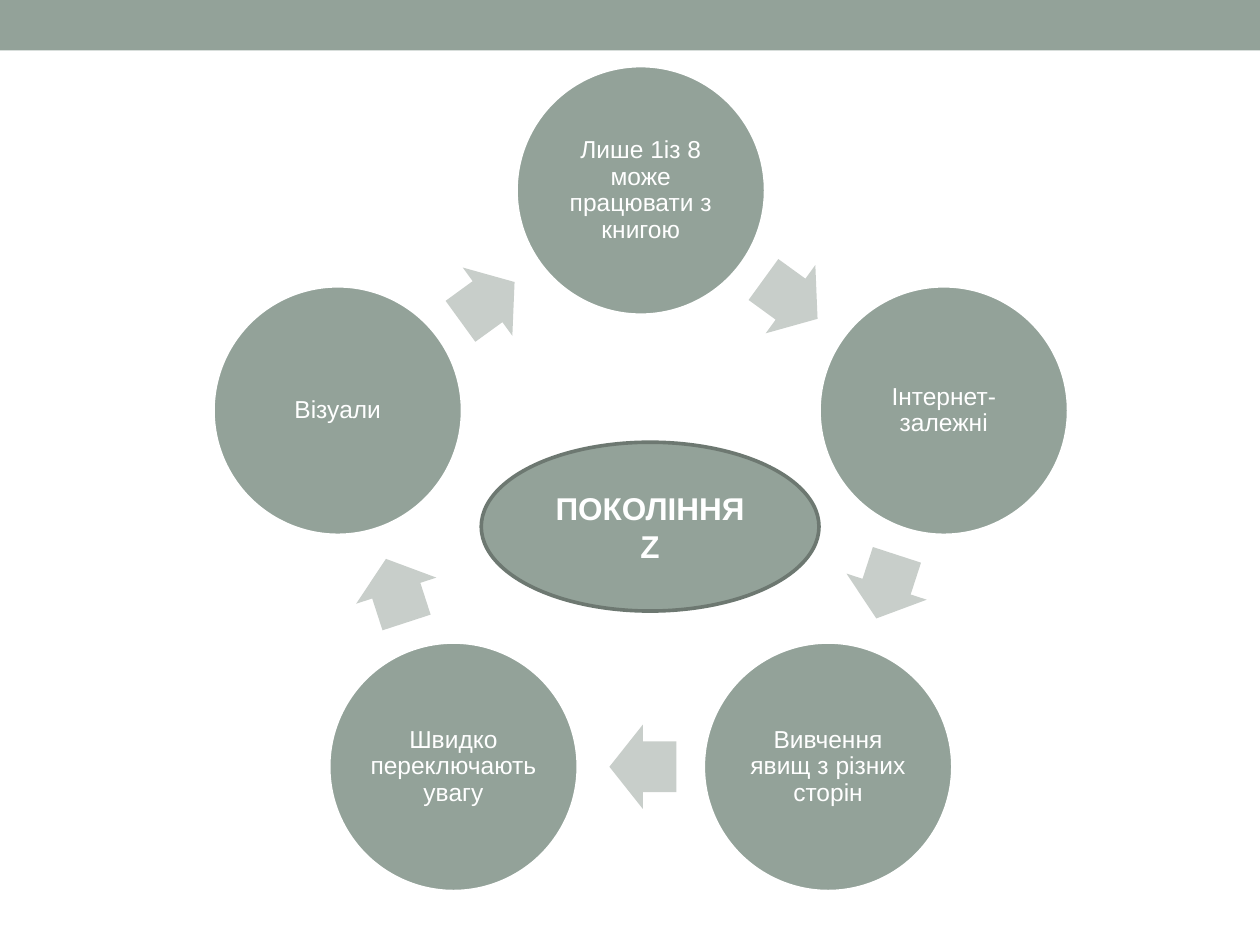
import math

from pptx import Presentation
from pptx.dml.color import RGBColor
from pptx.enum import shapes as es, text as et
from pptx.util import Pt

SAGE, PALE, DARK, WHITE = "93A299", "C8CECA", "6D7871", "FFFFFF"
TRAITS = [
    "Лише 1із 8 може працювати з книгою",
    "Інтернет-залежні",
    "Вивчення явищ з різних сторін",
    "Швидко переключають увагу",
    "Візуали",
]


def color(code):
    """Return the colour for a hex string."""
    return RGBColor.from_string(code)


def draw(tree, kind, box, fill, line=None):
    """Add a flat preset shape in box (left, top, width, height)."""
    shape = tree.add_shape(kind, *map(Pt, box))
    shape.shadow.inherit = False
    shape.fill.solid()
    shape.fill.fore_color.rgb = color(fill)
    if line:
        shape.line.color.rgb = color(line)
        shape.line.width = Pt(2.08)
    else:
        shape.line.fill.background()
    return shape


def write(shape, words, size, bold=False, inset=None, space=1.0):
    """Put centred white text in a shape."""
    frame = shape.text_frame
    frame.word_wrap = True
    frame.vertical_anchor = et.MSO_ANCHOR.MIDDLE
    if inset is not None:
        frame.margin_left = frame.margin_right = Pt(inset)
        frame.margin_top = frame.margin_bottom = Pt(inset)
    frame.text = words
    para = frame.paragraphs[0]
    para.alignment = et.PP_ALIGN.CENTER
    para.line_spacing = space
    font = para.runs[0].font
    font.name, font.size, font.bold = "Arial", Pt(size), bold
    font.color.rgb = color(WHITE)


def band(slide, box):
    """Draw the plain band across the top."""
    draw(slide.shapes, es.MSO_SHAPE.RECTANGLE, box, SAGE)


def cycle(slide, box, traits, disc=142.6, wide=38.2, high=48.2, lag=1.2):
    """Place discs clockwise around a ring, with an arrow after each."""
    left, top, width, _ = box
    step = 360 / len(traits)
    ring = (width - disc) / 2 / math.sin(math.radians(step))
    mid_x, mid_y = left + width / 2, top + disc / 2 + ring
    reach = ring * math.cos(math.radians(step / 2))
    tree = slide.shapes.add_group_shape().shapes
    for i, words in enumerate(traits):
        turn = math.radians(i * step)
        x = mid_x + ring * math.sin(turn)
        y = mid_y - ring * math.cos(turn)
        node = draw(tree, es.MSO_SHAPE.OVAL,
                    (x - disc / 2, y - disc / 2, disc, disc), SAGE, WHITE)
        write(node, words, 14, inset=1.4, space=0.9)

        angle = (i + 0.5) * step
        sin, cos = math.sin(math.radians(angle)), math.cos(math.radians(angle))
        x = mid_x + reach * sin - lag * cos
        y = mid_y - reach * cos - lag * sin
        arrow = draw(tree, es.MSO_SHAPE.RIGHT_ARROW,
                     (x - wide / 2, y - high / 2, wide, high), PALE)
        arrow.adjustments[0], arrow.adjustments[1] = 0.6, 0.5
        arrow.rotation = angle


def topic(slide, box, words):
    """Draw the outlined oval that names the topic."""
    oval = draw(slide.shapes, es.MSO_SHAPE.OVAL, box, SAGE, DARK)
    write(oval, words, 18, bold=True)


def main():
    """Build and save the slide."""
    deck = Presentation()
    deck.slide_width, deck.slide_height = Pt(720), Pt(540)
    slide = deck.slides.add_slide(deck.slide_layouts[6])
    band(slide, (0, 0, 720, 28.8))
    cycle(slide, (121.7, 37.5, 488.9, 472.4), TRAITS)
    topic(slide, (275, 252.7, 193, 96.5), "ПОКОЛІННЯ Z")
    deck.save("out.pptx")


if __name__ == "__main__":
    main()
